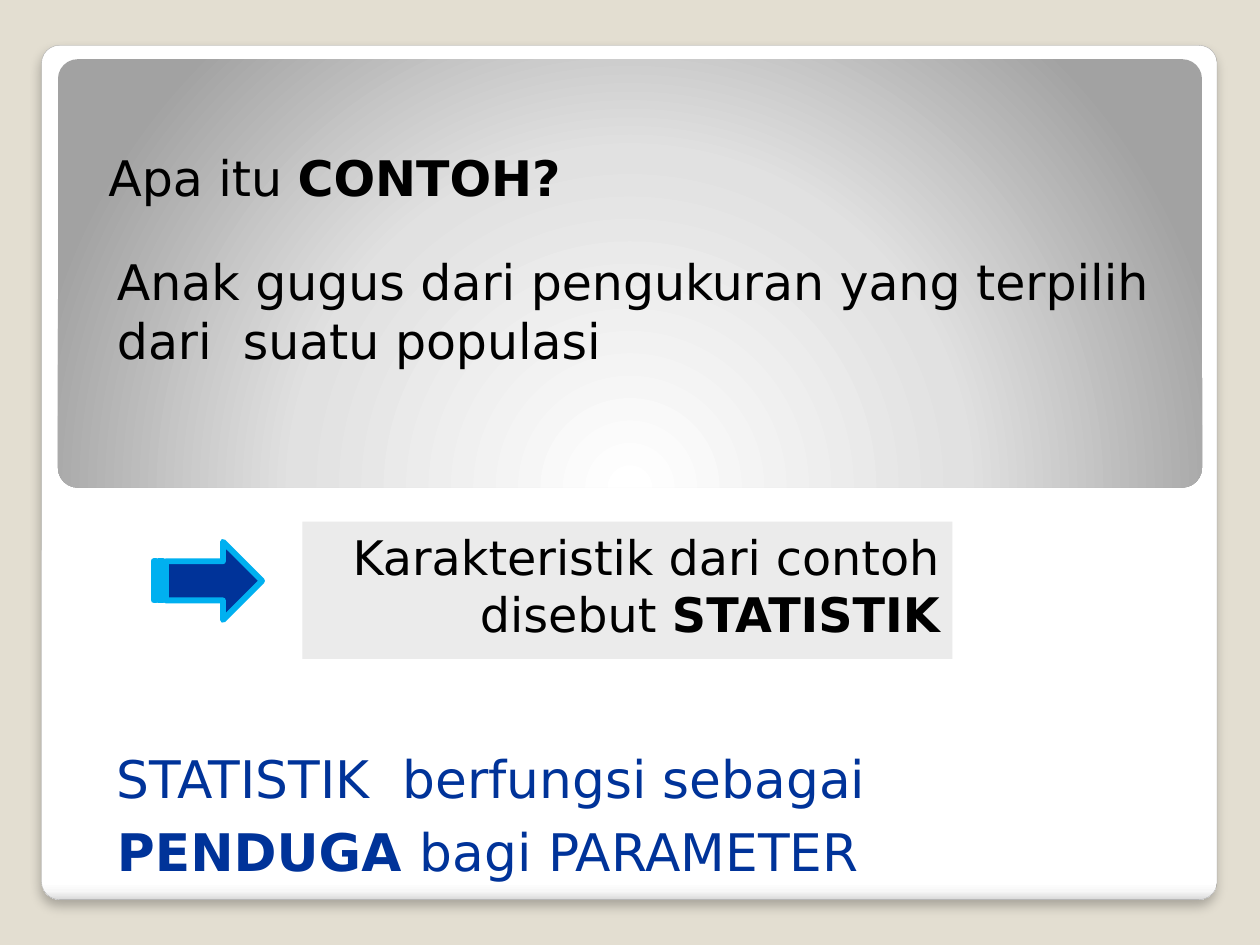
from dataclasses import dataclass

import lxml.etree
import pptx
import pptx.dml.color
import pptx.enum.shapes
import pptx.enum.text
import pptx.oxml
import pptx.oxml.ns
import pptx.util

Inches = pptx.util.Inches
Pt = pptx.util.Pt
SHAPES = pptx.enum.shapes.MSO_SHAPE
ALIGN = pptx.enum.text.PP_ALIGN
NAMESPACE = pptx.oxml.ns.nsdecls("a")

FONT = "DejaVu Sans"
BLACK, NAVY = "000000", "003399"

LINEAR_DOWN = '<a:lin ang="5400000" scaled="0"/>'
CIRCLE_FROM_BELOW = ('<a:path path="circle"><a:fillToRect l="50000" t="175000" '
                     'r="50000" b="-75000"/></a:path>')
SOFT_SHADOW = (f'<a:outerShdw {NAMESPACE} blurRad="{Pt(6)}" dist="{Pt(4)}" dir="5400000" '
               'algn="tl" rotWithShape="0"><a:srgbClr val="000000">'
               '<a:alpha val="25000"/></a:srgbClr></a:outerShdw>')


@dataclass
class Block:
    """A text block: each paragraph is a list of (wording, bold) spans."""
    area: tuple
    paragraphs: list
    size: float
    color: str = BLACK
    fill: str = ""
    align: ALIGN = ALIGN.LEFT
    space_ratio: float = 0.2
    insets: tuple = (0.1, 0.05, 0.1, 0.05)


BLOCKS = [
    Block((0.62, 1.17, 8.83, 0.7), [[("Apa itu ", False), ("CONTOH?", True)]], 28,
          space_ratio=0, insets=(0.24, 0, 0.1, 0.05)),
    Block((0.83, 1.95, 8.78, 1.09),
          [[("Anak gugus dari pengukuran yang terpilih dari  suatu populasi", False)]], 28),
    Block((2.4, 4.14, 5.16, 1.09),
          [[("Karakteristik dari contoh disebut ", False), ("STATISTIK", True)]], 27.2,
          fill="EBEBEB", align=ALIGN.RIGHT),
    Block((0.83, 5.88, 7.01, 1.01),
          [[("STATISTIK  berfungsi sebagai", False)],
           [("PENDUGA ", True), ("bagi PARAMETER", False)]], 29.6, color=NAVY),
]


def rgb(value: str) -> pptx.dml.color.RGBColor:
    return pptx.dml.color.RGBColor.from_string(value)


def apply(target, values: dict) -> None:
    for name, value in values.items():
        setattr(target, name, value)


def add_shape(page, kind, area: tuple, fill: str = "", line: str = "", width: float = 0):
    shape = page.shapes.add_shape(kind, *map(Inches, area))
    shape.shadow.inherit = False
    if fill:
        shape.fill.solid()
        shape.fill.fore_color.rgb = rgb(fill)
    else:
        shape.fill.background()
    if line:
        shape.line.color.rgb = rgb(line)
        shape.line.width = Pt(width)
    else:
        shape.line.fill.background()
    return shape


def set_gradient(shape, stops: list, direction: str) -> None:
    marks = "".join(f'<a:gs pos="{place * 1000}"><a:srgbClr val="{color}"/></a:gs>'
                    for place, color in stops)
    gradient = pptx.oxml.parse_xml(f'<a:gradFill {NAMESPACE} rotWithShape="1">'
                                   f'<a:gsLst>{marks}</a:gsLst>{direction}</a:gradFill>')
    properties = shape.element.spPr
    properties.replace(properties.find(pptx.oxml.ns.qn("a:noFill")), gradient)


def add_block(page, block: Block) -> None:
    if block.fill:
        box = add_shape(page, SHAPES.RECTANGLE, block.area, block.fill)
    else:
        box = page.shapes.add_textbox(*map(Inches, block.area))
    frame = box.text_frame
    left, top, right, bottom = map(Inches, block.insets)
    apply(frame, {"word_wrap": True, "vertical_anchor": pptx.enum.text.MSO_ANCHOR.TOP,
                  "margin_left": left, "margin_top": top,
                  "margin_right": right, "margin_bottom": bottom})
    for index, spans in enumerate(block.paragraphs):
        para = frame.add_paragraph() if index else frame.paragraphs[0]
        apply(para, {"alignment": block.align,
                     "space_before": Pt(block.size * block.space_ratio)})
        for wording, bold in spans:
            span = para.add_run()
            span.text = wording
            apply(span.font, {"name": FONT, "size": Pt(block.size), "bold": bold})
            span.font.color.rgb = rgb(block.color)


def main() -> None:
    deck = pptx.Presentation()
    apply(deck, {"slide_width": Inches(10), "slide_height": Inches(7.5)})
    page = deck.slides.add_slide(deck.slide_layouts[6])
    page.background.fill.solid()
    page.background.fill.fore_color.rgb = rgb("E3DED1")

    # White card with a soft shadow
    card = add_shape(page, SHAPES.ROUNDED_RECTANGLE, (0.33, 0.36, 9.33, 6.78),
                     line="A4A4A4", width=0.16)
    card.adjustments[0] = 0.021
    set_gradient(card, [(0, "FFFFFF"), (98, "FFFFFF"), (99, "F7F7F7"), (100, "DADADA")],
                 LINEAR_DOWN)
    effects = card.element.spPr.find(pptx.oxml.ns.qn("a:effectLst"))
    effects.append(lxml.etree.fromstring(SOFT_SHADOW))

    # Grey panel behind the definition
    panel = add_shape(page, SHAPES.ROUNDED_RECTANGLE, (0.46, 0.47, 9.08, 3.4))
    panel.adjustments[0] = 0.046
    set_gradient(panel, [(0, "FFFFFF"), (55, "E1E1E1"), (100, "A2A2A2")], CIRCLE_FROM_BELOW)

    # Wording and the arrow that points to the statistic
    for block in BLOCKS:
        add_block(page, block)
    add_shape(page, SHAPES.STRIPED_RIGHT_ARROW, (1.22, 4.3, 0.86, 0.62), NAVY, "00B0F0", 3.35)

    deck.save("out.pptx")


if __name__ == "__main__":
    main()
